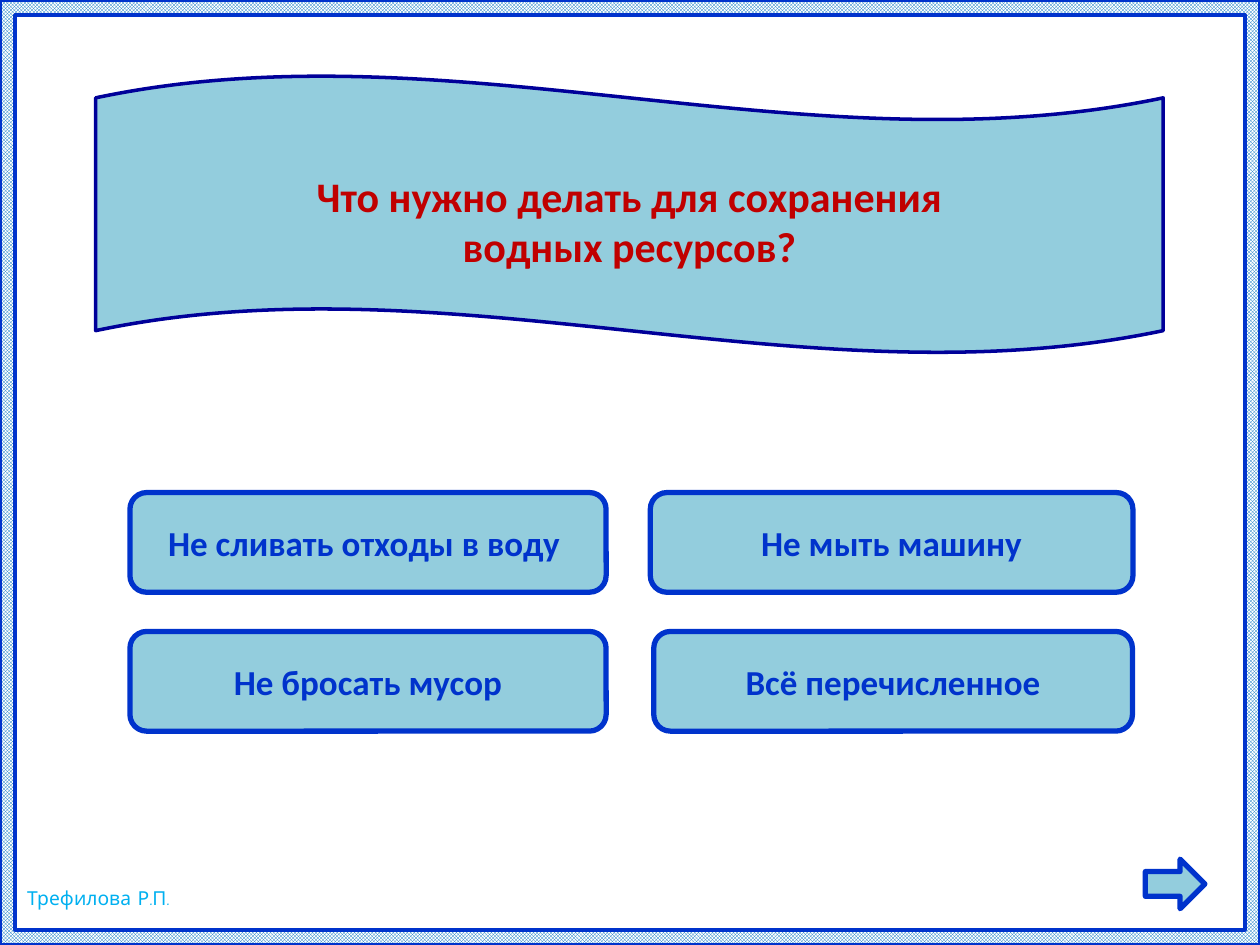
"""Build a quiz slide: one question on a wave banner, four answer buttons and a next arrow."""
from pptx import Presentation
from pptx.dml.color import RGBColor
from pptx.enum.dml import MSO_PATTERN
from pptx.enum.shapes import MSO_SHAPE as Shape
from pptx.enum.text import MSO_ANCHOR as Anchor, PP_ALIGN as Align
from pptx.util import Cm, Pt

QUESTION = ["Что нужно делать для сохранения", "водных ресурсов?"]
ANSWER_ROWS = [
    [("Не сливать отходы в воду ", 2.62, 9.6), ("Не мыть машину", 13.11, 9.73)],
    [("Не бросать мусор", 2.62, 9.6), ("Всё перечисленное", 13.18, 9.65)],
]
AUTHOR = "Трефилова Р.П."
COLORS = {
    "water": "93CDDD", "blue": "0033CC", "navy": "000099", "red": "C00000",
    "sky": "00B0F0", "check": "0070C0", "white": "FFFFFF",
}
SLIDE_W, SLIDE_H = 25.4, 19.05
ANSWER_TOP, ANSWER_H, ROW_STEP = 9.93, 2.01, 2.8


def color(name):
    return RGBColor.from_string(COLORS[name])


def write(shape, lines, *, size, ink, font="Calibri", bold=True, align=Align.CENTER,
          anchor=Anchor.MIDDLE, wrap=True, top_inset=0.13):
    frame = shape.text_frame
    frame.word_wrap = wrap
    frame.vertical_anchor = anchor
    frame.margin_top = Cm(top_inset)
    frame.text = "\n".join(lines)
    for paragraph in frame.paragraphs:
        paragraph.alignment = align
        paragraph.font.size = Pt(size)
        paragraph.font.name = font
        paragraph.font.bold = bold
        paragraph.font.color.rgb = color(ink)


def add_figure(slide, kind, box, line="blue", line_width=3, adjustments=()):
    figure = slide.shapes.add_shape(kind, *map(Cm, box))
    figure.shadow.inherit = False
    figure.fill.solid()
    figure.fill.fore_color.rgb = color("water")
    figure.line.color.rgb = color(line)
    figure.line.width = Pt(line_width)
    for index, value in enumerate(adjustments):
        figure.adjustments[index] = value
    return figure


def main():
    deck = Presentation()
    deck.slide_width, deck.slide_height = Cm(SLIDE_W), Cm(SLIDE_H)
    slide = deck.slides.add_slide(deck.slide_layouts[6])

    border = add_figure(slide, Shape.FRAME, (0, 0, SLIDE_W, SLIDE_H),
                        line_width=2, adjustments=[0.016])
    border.fill.patterned()
    border.fill.pattern = MSO_PATTERN.SMALL_CHECKER_BOARD
    border.fill.fore_color.rgb = color("check")
    border.fill.back_color.rgb = color("white")

    author = slide.shapes.add_textbox(Cm(0.3), Cm(17.73), Cm(3.6), Cm(0.73))
    write(author, [AUTHOR], size=11, ink="sky", font="Comic Neue", bold=False,
          align=Align.LEFT, anchor=Anchor.TOP, wrap=False)

    banner = add_figure(slide, Shape.WAVE, (1.93, 1.52, 21.52, 5.6),
                        line="navy", line_width=2, adjustments=[0.081, 0])
    write(banner, QUESTION, size=24, ink="red", top_inset=0.39)

    for row, answers in enumerate(ANSWER_ROWS):
        for answer, left, width in answers:
            box = (left, ANSWER_TOP + row * ROW_STEP, width, ANSWER_H)
            button = add_figure(slide, Shape.ROUNDED_RECTANGLE, box)
            write(button, [answer], size=20, ink="blue")

    add_figure(slide, Shape.RIGHT_ARROW, (23.09, 17.32, 1.2, 1))
    deck.save("out.pptx")


if __name__ == "__main__":
    main()
